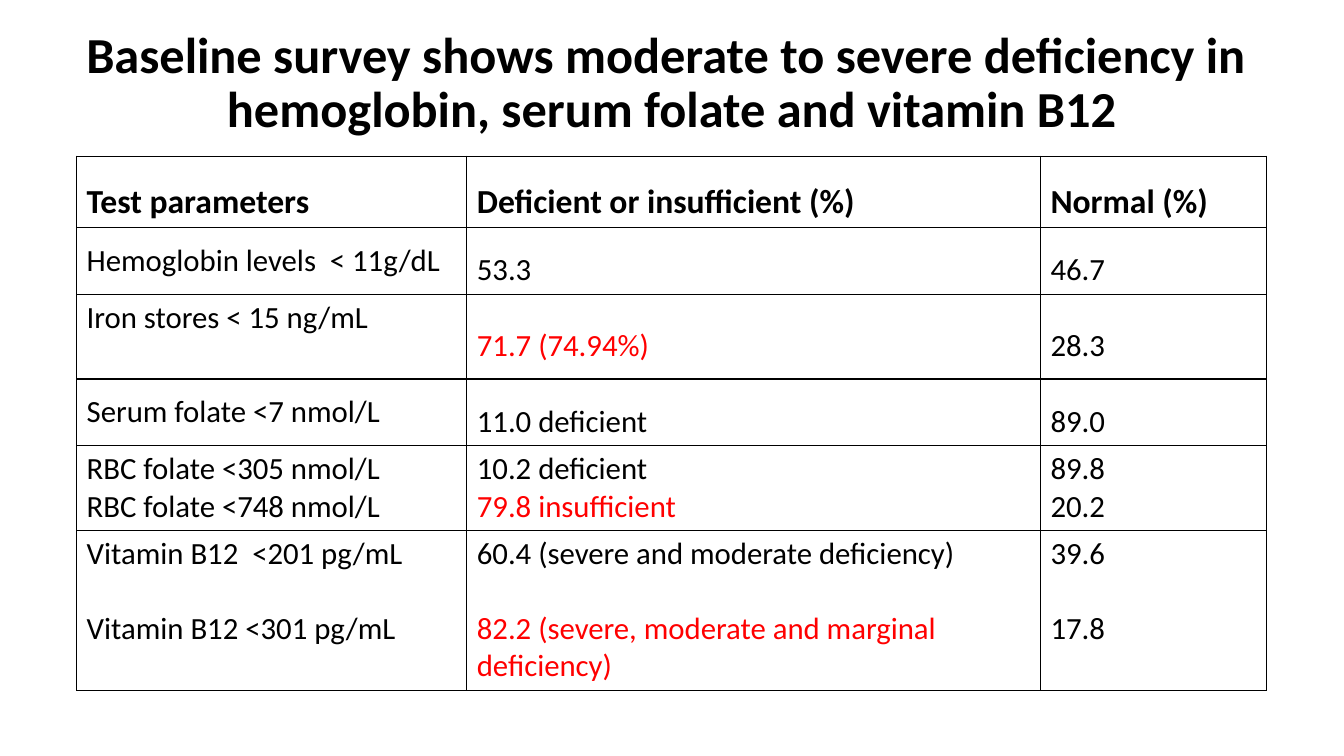
from lxml.etree import SubElement as add_element
from pptx import Presentation
from pptx.dml.color import RGBColor
from pptx.enum.text import MSO_ANCHOR as Anchor, PP_ALIGN as Align
from pptx.oxml.ns import qn
from pptx.util import Inches, Pt

BLACK = RGBColor(0x00, 0x00, 0x00)
RED = RGBColor(0xFF, 0x00, 0x00)
FONT = "Calibri"
WIDTH, HEIGHT = Inches(13.33), Inches(7.5)
COLUMNS = (3.87, 5.69, 2.24)
ROWS = (0.71, 0.66, 0.84, 0.66, 0.84, 1.59)
BLANK_LINE = 26.85

TITLE = ("Baseline survey shows moderate to severe deficiency in \v"
         "hemoglobin, serum folate and vitamin B12")
HEADER = ("Test parameters", "Deficient or insufficient (%)", "Normal (%)")
SINGLE_ROWS = (
    ("Hemoglobin levels  < 11g/dL", "53.3", "46.7"),
    ("Iron stores < 15 ng/mL", "71.7 (74.94%)", "28.3"),
    ("Serum folate <7 nmol/L", "11.0 deficient", "89.0"),
)
PAIRED_ROWS = (
    (("RBC folate <305 nmol/L", "RBC folate <748 nmol/L"),
     ("10.2 deficient", "79.8 insufficient"),
     ("89.8", "20.2")),
    (("Vitamin B12  <201 pg/mL", "Vitamin B12 <301 pg/mL"),
     ("60.4 (severe and moderate deficiency)",
      "82.2 (severe, moderate and marginal deficiency)"),
     ("39.6", "17.8")),
)
HIGHLIGHTS = {SINGLE_ROWS[1][1], PAIRED_ROWS[0][1][1], PAIRED_ROWS[1][1][1]}


def write(frame, *lines, size=22, bold=False, align=Align.LEFT, spacing=1.0, gap=0):
    """Write each line as a paragraph, with a gap in points between them."""
    frame.word_wrap = True
    for index, line in enumerate(lines):
        para = frame.add_paragraph() if index else frame.paragraphs[0]
        para.text = line
        para.alignment = align
        para.line_spacing = spacing
        if index:
            para.space_before = Pt(gap)
        for span in para.runs:
            span.font.name = FONT
            span.font.size = Pt(size)
            span.font.bold = bold
            span.font.color.rgb = RED if line in HIGHLIGHTS else BLACK


def add_title(page):
    """Add the centred heading across the slide's full width."""
    box = page.shapes.add_textbox(0, Inches(0.21), WIDTH, Inches(1.25))
    box.text_frame.vertical_anchor = Anchor.MIDDLE
    write(box.text_frame, TITLE, size=36, bold=True, align=Align.CENTER, spacing=0.9)


def outline(cell):
    """Give a cell thin black borders and no fill."""
    properties = cell._tc.get_or_add_tcPr()
    for side in ("lnL", "lnR", "lnT", "lnB"):
        line = add_element(properties, qn(f"a:{side}"), w=str(Pt(1)))
        fill = add_element(line, qn("a:solidFill"))
        add_element(fill, qn("a:srgbClr"), val=str(BLACK))
    cell.fill.background()


def add_grid(page):
    """Add the empty bordered table and return it."""
    frame = page.shapes.add_table(len(ROWS), len(COLUMNS), Inches(0.76), Inches(1.55),
                                  Inches(sum(COLUMNS)), Inches(sum(ROWS)))
    table = frame.table
    table.first_row = table.horz_banding = False
    for column, width in zip(table.columns, COLUMNS):
        column.width = Inches(width)
    for row, height in zip(table.rows, ROWS):
        row.height = Inches(height)
    for cell in table.iter_cells():
        outline(cell)
    return table


def fill_table(table):
    """Write the header, the single-value rows and the paired rows."""
    for column, text in enumerate(HEADER):
        write(table.cell(0, column).text_frame, text, size=24, bold=True, spacing=1.5)
    for row, texts in enumerate(SINGLE_ROWS, start=1):
        for column, text in enumerate(texts):
            cell = table.cell(row, column)
            top = text.startswith("Iron")
            cell.vertical_anchor = Anchor.TOP if top else Anchor.MIDDLE
            write(cell.text_frame, text, spacing=1.5 if column else 1.0)
    for row, (pairs, gap) in enumerate(zip(PAIRED_ROWS, (0, BLANK_LINE)), start=4):
        for column, pair in enumerate(pairs):
            write(table.cell(row, column).text_frame, *pair, gap=gap)


def main():
    """Build the slide and save it."""
    deck = Presentation()
    deck.slide_width, deck.slide_height = WIDTH, HEIGHT
    page = deck.slides.add_slide(deck.slide_layouts[6])
    add_title(page)
    fill_table(add_grid(page))
    deck.save("out.pptx")


if __name__ == "__main__":
    main()
